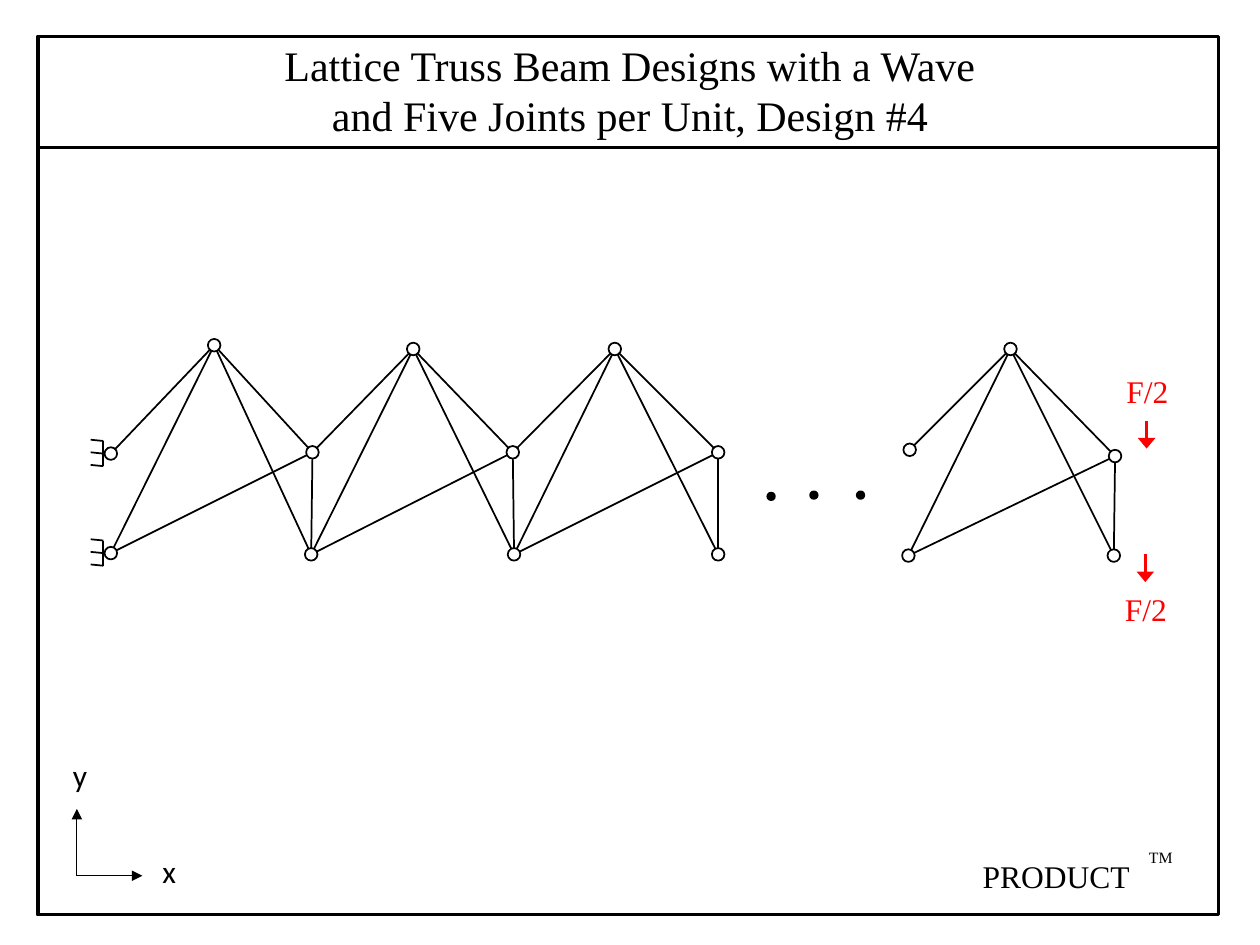
import dataclasses
import typing

import lxml.etree
import pptx
import pptx.dml.color
import pptx.enum.shapes
import pptx.enum.text
import pptx.oxml.ns
import pptx.util

Inches = pptx.util.Inches
Pt = pptx.util.Pt
Color = pptx.dml.color.RGBColor
Shape = pptx.enum.shapes.MSO_SHAPE


@dataclasses.dataclass(frozen=True)
class Theme:
    ink: Color = Color(0, 0, 0)
    paper: Color = Color(255, 255, 255)
    load: Color = Color(255, 0, 0)
    serif: str = "Times New Roman"
    sans: str = "Calibri"
    title_size: float = 24
    label_size: float = 18
    mark_size: float = 9
    thin: float = 0.5
    member: float = 1
    heavy: float = 2


class Point(typing.NamedTuple):
    x: float
    y: float


class Bay(typing.NamedTuple):
    """Two joints on each side of one apex."""
    left_middle: Point
    left_bottom: Point
    apex: Point
    right_middle: Point
    right_bottom: Point


class Label(typing.NamedTuple):
    text: str
    left: float
    top: float
    width: float
    font: str
    size: float
    color: Color


THEME = Theme()
JOINT_DIAMETER = 0.1
DOT_DIAMETER = 0.06

# Middle and bottom joints at each unit boundary, then the apexes between them.
BOUNDARIES = [
    (Point(0.88, 3.6), Point(0.88, 4.39)),
    (Point(2.48, 3.59), Point(2.47, 4.4)),
    (Point(4.07, 3.59), Point(4.08, 4.4)),
    (Point(5.7, 3.59), Point(5.7, 4.4)),
]
APEXES = [Point(1.7, 2.74), Point(3.28, 2.77), Point(4.88, 2.77)]
LAST_BAY = Bay(Point(7.22, 3.57), Point(7.21, 4.41), Point(8.02, 2.77),
               Point(8.85, 3.62), Point(8.84, 4.41))
BAYS = [Bay(*left, apex, *right)
        for left, apex, right in zip(BOUNDARIES, APEXES, BOUNDARIES[1:])] + [LAST_BAY]

ELLIPSIS_DOTS = [Point(6.12, 3.94), Point(6.46, 3.93), Point(6.83, 3.93)]
LOAD_TAILS = [Point(9.1, 3.34), Point(9.09, 4.4)]
LOAD_LENGTH = 0.22
AXIS_ORIGIN = Point(0.61, 6.95)
AXIS_ENDS = [Point(1.13, 6.95), Point(0.61, 6.42)]

LABELS = [
    Label("F/2", 8.84, 2.9, 0.59, THEME.serif, THEME.label_size, THEME.load),
    Label("F/2", 8.83, 4.63, 0.6, THEME.serif, THEME.label_size, THEME.load),
    Label("x", 1.19, 6.71, 0.31, THEME.sans, THEME.label_size, THEME.ink),
    Label("y", 0.48, 5.95, 0.31, THEME.sans, THEME.label_size, THEME.ink),
    Label("PRODUCT", 7.7, 6.75, 1.52, THEME.serif, THEME.label_size, THEME.ink),
    Label("TM", 9.02, 6.68, 0.51, THEME.serif, THEME.mark_size, THEME.ink),
]


def draw_line(slide, start: Point, end: Point, width: float = THEME.member,
              color: Color = THEME.ink, head_width: typing.Optional[str] = None) -> None:
    """Draw a line, with an arrowhead at the end if head_width is given."""
    connector = slide.shapes.add_connector(
        pptx.enum.shapes.MSO_CONNECTOR.STRAIGHT,
        Inches(start.x), Inches(start.y), Inches(end.x), Inches(end.y))
    connector.line.width = Pt(width)
    connector.line.color.rgb = color
    qn = pptx.oxml.ns.qn
    if head_width:
        lxml.etree.SubElement(connector.line._get_or_add_ln(), qn("a:tailEnd"),
                              type="triangle", w=head_width, len="med")
    lxml.etree.SubElement(connector._element.spPr, qn("a:effectLst"))


def draw_circle(slide, center: Point, diameter: float, fill: Color) -> None:
    circle = slide.shapes.add_shape(
        Shape.OVAL, Inches(center.x - diameter / 2), Inches(center.y - diameter / 2),
        Inches(diameter), Inches(diameter))
    circle.shadow.inherit = False
    circle.fill.solid()
    circle.fill.fore_color.rgb = fill
    circle.line.color.rgb = THEME.ink
    circle.line.width = Pt(THEME.member)


def draw_members(slide, bay: Bay) -> None:
    for joint in (bay.left_middle, bay.left_bottom, bay.right_middle, bay.right_bottom):
        draw_line(slide, joint, bay.apex)
    draw_line(slide, bay.left_bottom, bay.right_middle)
    draw_line(slide, bay.right_middle, bay.right_bottom)


def draw_support(slide, joint: Point) -> None:
    """Draw the wall plate and its three anchors left of a joint."""
    wall = joint.x - 0.06
    draw_line(slide, Point(wall, joint.y - 0.1), Point(wall, joint.y + 0.1))
    for offset in (-0.11, -0.01, 0.09):
        anchor = joint.y + offset
        draw_line(slide, Point(wall - 0.1, anchor), Point(wall, anchor + 0.01))


def draw_label(slide, label: Label) -> None:
    box = slide.shapes.add_textbox(Inches(label.left), Inches(label.top),
                                   Inches(label.width), Inches(0.4))
    frame = box.text_frame
    frame.word_wrap = True
    frame.margin_right = 0
    frame.text = label.text
    font = frame.paragraphs[0].font
    font.name, font.size, font.color.rgb = label.font, Pt(label.size), label.color


def write_title(slide) -> None:
    title = slide.shapes.title
    title.left, title.top = Inches(2.06), Inches(0.26)
    title.width, title.height = Inches(5.88), Inches(0.91)
    frame = title.text_frame
    frame.word_wrap = True
    frame.auto_size = pptx.enum.text.MSO_AUTO_SIZE.NONE
    frame.vertical_anchor = pptx.enum.text.MSO_ANCHOR.TOP
    frame.text = ("Lattice Truss Beam Designs with a Wave\n"
                  "and Five Joints per Unit, Design #4")
    for paragraph in frame.paragraphs:
        paragraph.alignment = pptx.enum.text.PP_ALIGN.CENTER
        paragraph.font.name = THEME.serif
        paragraph.font.size = Pt(THEME.title_size)
        paragraph.font.color.rgb = THEME.ink


def draw_frame(slide) -> None:
    frame = slide.shapes.add_shape(Shape.RECTANGLE, Inches(0.3), Inches(0.29),
                                   Inches(9.37), Inches(6.97))
    frame.shadow.inherit = False
    frame.fill.background()
    frame.line.color.rgb = THEME.ink
    frame.line.width = Pt(THEME.heavy)
    draw_line(slide, Point(0.3, 1.17), Point(9.67, 1.17), THEME.heavy)


def main() -> None:
    presentation = pptx.Presentation()
    presentation.slide_width, presentation.slide_height = Inches(10), Inches(7.5)
    slide = presentation.slides.add_slide(presentation.slide_layouts[5])
    write_title(slide)
    draw_frame(slide)

    for bay in BAYS:
        draw_members(slide, bay)
    for support in BOUNDARIES[0]:
        draw_support(slide, support)
    for joint in dict.fromkeys(joint for bay in BAYS for joint in bay):
        draw_circle(slide, joint, JOINT_DIAMETER, THEME.paper)
    for dot in ELLIPSIS_DOTS:
        draw_circle(slide, dot, DOT_DIAMETER, THEME.ink)

    for tail in LOAD_TAILS:
        draw_line(slide, tail, Point(tail.x, tail.y + LOAD_LENGTH),
                  THEME.heavy, THEME.load, "lg")
    for end in AXIS_ENDS:
        draw_line(slide, AXIS_ORIGIN, end, THEME.thin, head_width="med")
    for label in LABELS:
        draw_label(slide, label)
    presentation.save("out.pptx")


if __name__ == "__main__":
    main()
